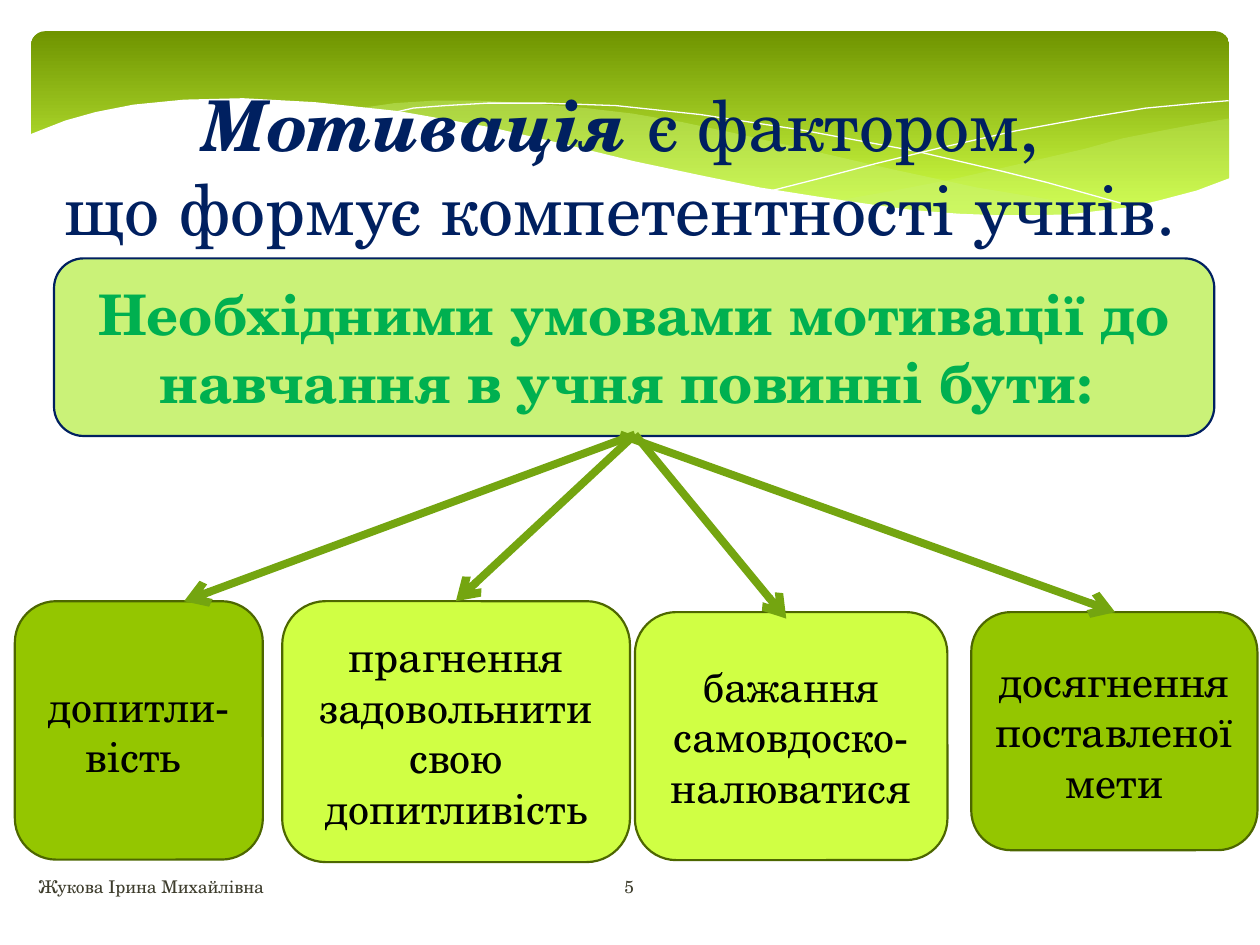
from lxml.etree import SubElement
from pptx import Presentation
from pptx.dml.color import RGBColor
from pptx.enum.shapes import MSO_CONNECTOR, MSO_SHAPE
from pptx.enum.text import MSO_ANCHOR, MSO_AUTO_SIZE, PP_ALIGN
from pptx.oxml.ns import qn
from pptx.util import Cm, Pt

LIGHT, GREEN, LIME = "CAF278", "94C600", "D0FF44"
NAVY, OUTLINE, ARROW, FOOTER = "002060", "4D6700", "74A510", "3E3D2D"

RIGHT_WAVE = [
    (24.77, 2.39), (24.08, 2.51), (23.39, 2.64), (22.63, 2.79), (21.87, 3), (20.45, 3.33),
    (19.13, 3.63), (17.93, 3.86), (16.79, 4.06), (17.91, 4.19), (18.92, 4.29), (19.84, 4.34),
    (20.68, 4.37), (21.44, 4.34), (22.15, 4.29), (22.78, 4.19), (23.39, 4.06), (23.93, 3.91),
    (24.46, 3.73), (24.79, 3.58), (24.79, 2.39),
]
MIDDLE_WAVE = [
    (22.68, 4.24), (21.26, 4.04), (19.69, 3.78), (17.93, 3.4), (15.98, 2.95), (14.83, 2.69),
    (13.74, 2.46), (12.75, 2.29), (11.81, 2.18), (10.67, 2.08), (9.65, 2.03), (8.74, 2.03),
    (7.95, 2.08), (7.26, 2.18), (8.2, 2.29), (9.19, 2.46), (10.26, 2.69), (11.4, 2.95),
    (13.46, 3.43), (15.27, 3.81), (16.51, 4.01), (17.65, 4.19), (18.69, 4.29), (19.63, 4.37),
    (20.5, 4.39), (21.29, 4.37), (22.02, 4.32),
]
LONG_CURVE = [
    (7.85, 2.29), (8.33, 2.18), (8.97, 2.13), (9.83, 2.08), (11, 2.08), (12.42, 2.13),
    (14.12, 2.31), (16.15, 2.62), (18.47, 3.05), (20.19, 3.45), (21.11, 3.68), (23.04, 4.22),
]
SHORT_CURVE = [
    (15.57, 3.84), (16.59, 3.58), (17.65, 3.3), (19, 2.97), (20.47, 2.64), (22, 2.36),
    (23.1, 2.18), (24.16, 2.08), (24.77, 2.03),
]
WHITE_WAVE = [
    (0.58, 2.72), (0.91, 2.59), (1.32, 2.43), (1.93, 2.26), (2.69, 2.11), (3.71, 2.01),
    (4.9, 1.98), (6.35, 2.06), (8.03, 2.24), (9.91, 2.57), (11.35, 2.9), (12.78, 3.25),
    (14.1, 3.53), (15.32, 3.78), (16.46, 3.96), (17.48, 4.11), (18.44, 4.24), (19.33, 4.31),
    (20.14, 4.34), (20.9, 4.34), (21.59, 4.32), (22.23, 4.24), (22.83, 4.17), (23.37, 4.04),
    (24.13, 3.84), (24.82, 3.58), (24.82, 5.69), (0.58, 5.69),
]
CONDITIONS = [
    ("допитли-вість ", (0.3, 12.12, 5, 5.21), GREEN),
    ("прагнення задовольнити свою допитливість", (5.69, 12.12, 7.01, 5.26), LIME),
    ("бажання самовдоско-налюватися", (12.8, 12.34, 6.3, 5), LIME),
    ("досягнення поставленої мети", (19.58, 12.34, 5.77, 4.8), GREEN),
]
ARROWS = [
    ((12.8, 8.76), (3.71, 12.12)),
    ((12.5, 8.76), (22.48, 12.34)),
    ((12.8, 8.76), (15.85, 12.47)),
    ((12.8, 8.76), (9.19, 12.12)),
]


def color(value):
    return RGBColor.from_string(value)


class SlideBuilder:
    """Holds the text style and the current slide, and adds each kind of element."""

    font = "TeX Gyre Schola"

    def __init__(self, slide):
        self.slide = slide
        self.shapes = slide.shapes

    def set_text(self, shape, text, size, text_color, align=PP_ALIGN.CENTER, anchor=MSO_ANCHOR.MIDDLE, bold=False):
        frame = shape.text_frame
        frame.text = text
        frame.word_wrap = True
        frame.auto_size = MSO_AUTO_SIZE.NONE
        frame.vertical_anchor = anchor
        for paragraph in frame.paragraphs:
            paragraph.alignment = align
            for run in paragraph.runs:
                self.style_run(run, size, text_color, bold)

    def style_run(self, run, size, text_color, bold=False, italic=False):
        run.font.name = self.font
        run.font.size = Pt(size)
        run.font.bold = bold
        run.font.italic = italic
        run.font.color.rgb = color(text_color)

    def title(self, emphasis, text, box):
        shape = self.shapes.title
        shape.left, shape.top, shape.width, shape.height = map(Cm, box)
        self.set_text(shape, text, 40, NAVY, anchor=MSO_ANCHOR.TOP)
        first = shape.text_frame.paragraphs[0]
        rest = first.runs[0].text
        first.runs[0].text = emphasis
        self.style_run(first.runs[0], 40, NAVY, bold=True, italic=True)
        run = first.add_run()
        run.text = rest
        self.style_run(run, 40, NAVY)
        self.shapes._spTree.append(shape._element)

    def band(self, box):
        shape = self.shapes.add_shape(MSO_SHAPE.ROUNDED_RECTANGLE, *map(Cm, box))
        shape.shadow.inherit = False
        shape.adjustments[0] = 0.07
        shape.line.fill.background()
        shape.fill.gradient()
        shape.fill.gradient_angle = 270
        for stop, value, position in zip(shape.fill.gradient_stops, ("6F9400", LIME), (0, 0.9)):
            stop.color.rgb = color(value)
            stop.position = position

    def outline(self, points, close):
        start, *others = [(Cm(x), Cm(y)) for x, y in points]
        builder = self.shapes.build_freeform(*start)
        builder.add_line_segments(others, close=close)
        shape = builder.convert_to_shape()
        shape.shadow.inherit = False
        return shape

    def wave(self, points, fill, opacity=100):
        shape = self.outline(points, True)
        shape.line.fill.background()
        shape.fill.solid()
        shape.fill.fore_color.rgb = color(fill)
        value = shape._element.spPr.find(qn("a:solidFill")).find(qn("a:srgbClr"))
        SubElement(value, qn("a:alpha"), val=str(opacity * 1000))

    def curve(self, points):
        shape = self.outline(points, False)
        shape.fill.background()
        shape.line.color.rgb = color("FFFFFF")
        shape.line.width = Pt(0)

    def card(self, text, box, fill, line, size, text_color, bold=False):
        shape = self.shapes.add_shape(MSO_SHAPE.ROUNDED_RECTANGLE, *map(Cm, box))
        shape.shadow.inherit = False
        shape.fill.solid()
        shape.fill.fore_color.rgb = color(fill)
        shape.line.color.rgb = color(line)
        shape.line.width = Pt(1.25)
        self.set_text(shape, text, size, text_color, bold=bold)

    def label(self, text, box, align):
        shape = self.shapes.add_textbox(*map(Cm, box))
        self.set_text(shape, text, 10, FOOTER, align)

    def arrow(self, start, end):
        connector = self.shapes.add_connector(MSO_CONNECTOR.STRAIGHT, *map(Cm, start + end))
        connector.line.color.rgb = color(ARROW)
        connector.line.width = Pt(4.5)
        SubElement(connector.line._get_or_add_ln(), qn("a:tailEnd"), type="arrow")
        SubElement(connector._element.spPr, qn("a:effectLst"))


def main():
    presentation = Presentation()
    presentation.slide_width, presentation.slide_height = Cm(25.4), Cm(19.05)
    builder = SlideBuilder(presentation.slides.add_slide(presentation.slide_layouts[5]))

    builder.band((0.63, 0.63, 24.15, 3.96))
    builder.wave(RIGHT_WAVE, LIGHT, 29)
    builder.wave(MIDDLE_WAVE, LIGHT, 40)
    builder.curve(LONG_CURVE)
    builder.curve(SHORT_CURVE)
    builder.wave(WHITE_WAVE, "FFFFFF")

    builder.label("Жукова Ірина Михайлівна", (0.53, 17.37, 10.52, 1.02), PP_ALIGN.LEFT)
    builder.label("5", (11.07, 17.37, 3.23, 1.02), PP_ALIGN.CENTER)
    builder.title("Мотивація", " є фактором, \nщо формує компетентності учнів. ", (0, 1.52, 25.4, 3.68))
    builder.card("Необхідними умовами мотивації до навчання в учня повинні бути: ",
                 (1.09, 5.21, 23.39, 3.58), LIGHT, NAVY, 32, "00B050", bold=True)
    for text, box, fill in CONDITIONS:
        builder.card(text, box, fill, OUTLINE, 24, "000000")
    for start, end in ARROWS:
        builder.arrow(start, end)

    presentation.save("out.pptx")


if __name__ == "__main__":
    main()
